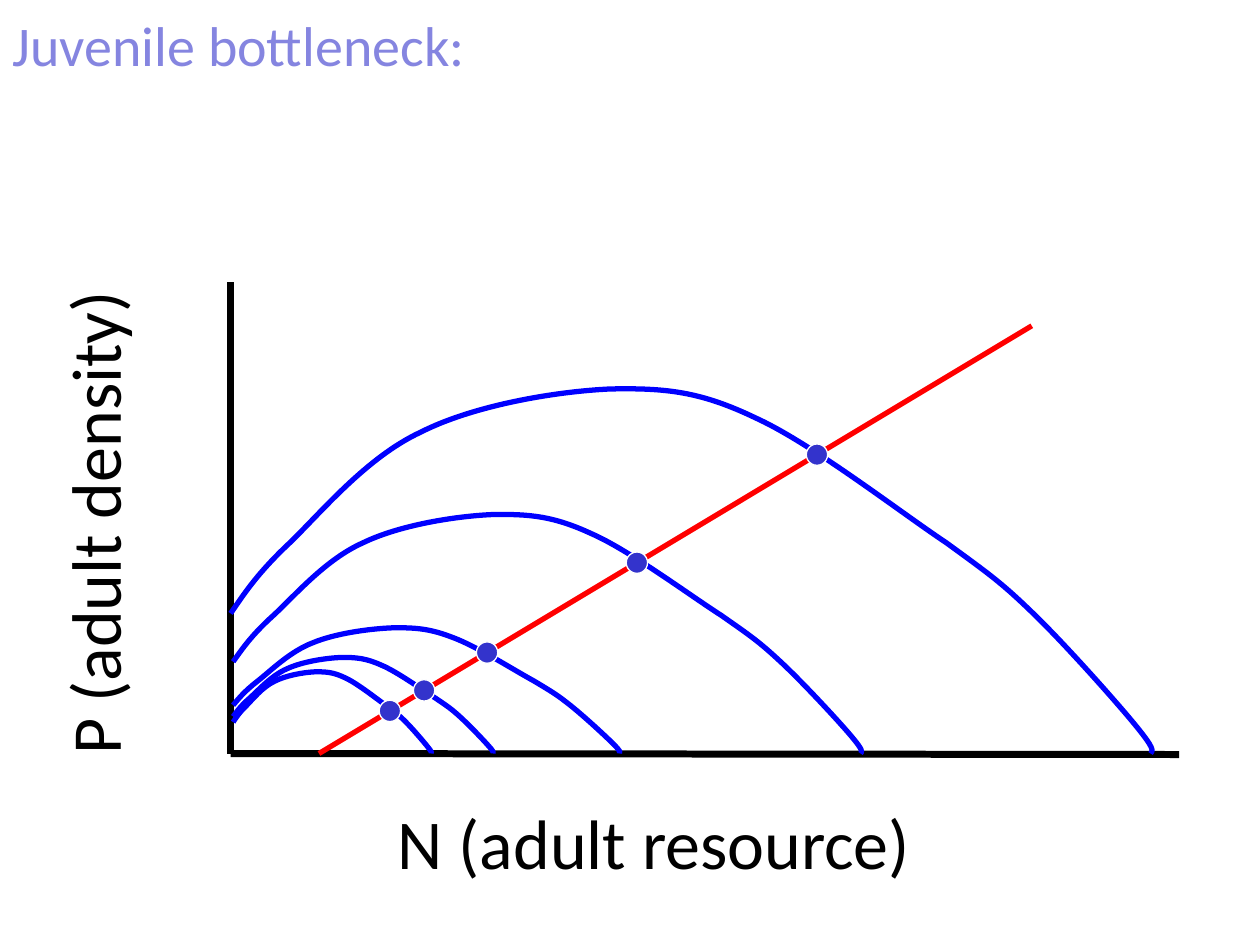
from pptx import Presentation
from pptx.dml.color import RGBColor
from pptx.enum.shapes import MSO_CONNECTOR, MSO_SHAPE
from pptx.enum.text import MSO_ANCHOR, MSO_AUTO_SIZE, PP_ALIGN
from pptx.oxml.ns import qn
from pptx.oxml.xmlchemy import OxmlElement
from pptx.util import Cm, Pt

STRAIGHT = MSO_CONNECTOR.STRAIGHT
ELLIPSE = MSO_SHAPE.OVAL
TOP = MSO_ANCHOR.TOP
NO_AUTOFIT = MSO_AUTO_SIZE.NONE
LEFT = PP_ALIGN.LEFT

LAVENDER = RGBColor(0x85, 0x85, 0xE0)
BLACK = RGBColor(0, 0, 0)
BLUE = RGBColor(0, 0, 0xFF)
RED = RGBColor(0xFF, 0, 0)
INDIGO = RGBColor(0x33, 0x33, 0xCC)
WHITE = RGBColor(0xFF, 0xFF, 0xFF)

FONT = "Calibri"
TITLE_BOX = (0, 0.08, 9.73, 3)
PLOT_BOX = (4.65, 5.69, 19.12, 9.5)

HUMP_START = (0, 61.7)
HUMP_BEZIERS = [
    [(1.5, 56.2), (2.9, 50.7), (6.4, 42.4)],
    [(9.8, 34.1), (14.7, 19), (20.6, 12.1)],
    [(26.3, 4.8), (35.1, 1), (41.1, 0.3)],
    [(47.2, 0), (50.9, 1), (56.9, 8.3)],
    [(62.9, 15.2), (72.4, 33.8), (77.5, 42.4)],
    [(82.4, 51.4), (83.5, 53.4), (86.9, 61.7)],
    [(90.3, 70), (95.9, 85.9), (98, 92.4)],
    [(100, 98.6), (99.9, 99.3), (99.6, 100)],
]
HUMP_SIZES = [(0.05, 4.01, 1.65), (0.05, 5.26, 1.94), (0.05, 7.82, 2.54),
              (0.05, 12.7, 4.83), (0, 18.62, 7.37)]
ISOCLINE_FOOT = 1.78
ISOCLINE_END = 16.15
ISOCLINE_SLOPE = 0.6
EQUILIBRIA = [11.82, 8.19, 3.9, 3.21, 5.17]
DOT_SIZE = 0.43


def write_text(shape, text, size, color, line_spacing=None):
    """Write left-aligned text with the given format into a shape."""
    frame = shape.text_frame
    frame.text = text
    frame.word_wrap = True
    frame.auto_size = NO_AUTOFIT
    frame.vertical_anchor = TOP
    paragraph = frame.paragraphs[0]
    paragraph.alignment = LEFT
    paragraph.line_spacing = line_spacing
    font = paragraph.runs[0].font
    font.name, font.size = FONT, Pt(size)
    font.color.rgb = color


def add_line(shapes, start, end, color, width):
    """Draw a straight line without a shadow."""
    line = shapes.add_connector(STRAIGHT, *map(Cm, start + end))
    line.line.color.rgb = color
    line.line.width = Pt(width)
    line._element.spPr.append(OxmlElement("a:effectLst"))


def add_title(slide, box):
    """Place the slide title in its box."""
    title = slide.shapes.title
    title.left, title.top, title.width, title.height = map(Cm, box)
    write_text(title, "Juvenile bottleneck:", 32, LAVENDER)


def add_axes(slide, box):
    """Draw both axes and their labels as one group."""
    left, top, width, height = box
    bottom = top + height
    shapes = slide.shapes.add_group_shape().shapes
    add_line(shapes, (left, top), (left, bottom), BLACK, 4)
    add_line(shapes, (left, bottom), (left + width, bottom + 0.02), BLACK, 4)
    labels = [("N (adult resource)", 3.12, 10.06, 11.91, 0),
              ("P (adult density)", -8.31, 3.28, 10.8, 270)]
    for text, dx, dy, length, rotation in labels:
        label = shapes.add_textbox(Cm(left + dx), Cm(top + dy), Cm(length), Cm(2.18))
        label.rotation = rotation
        write_text(label, text, 40, BLACK, line_spacing=1.15)


def add_hump(slide, box):
    """Draw the hump-shaped resource isocline scaled to its box."""
    left, top, width, height = box

    def place(point):
        """Turn percentages of the box into slide lengths."""
        return Cm(left + width * point[0] / 100), Cm(top + height * point[1] / 100)

    builder = slide.shapes.build_freeform(*place(HUMP_START))
    points = [place(point) for bezier in HUMP_BEZIERS for point in bezier]
    builder.add_line_segments(points, close=False)
    hump = builder.convert_to_shape()
    hump.fill.background()
    hump.line.color.rgb = BLUE
    hump.line.width = Pt(3)
    hump.shadow.inherit = False
    segments = list(hump._element.iter(qn("a:lnTo")))
    for first in range(0, len(segments), 3):
        bezier = OxmlElement("a:cubicBezTo")
        segments[first].addprevious(bezier)
        for segment in segments[first:first + 3]:
            bezier.append(segment[0])
            segment.getparent().remove(segment)


def add_isoclines(slide, box):
    """Draw the humps, the rising line and the dots where they cross."""
    left, top, _, plot_height = box
    bottom = top + plot_height
    for dx, width, height in HUMP_SIZES:
        add_hump(slide, (left + dx, bottom - height, width, height))

    def on_isocline(x):
        """Give the point of the rising line at a distance from the axis."""
        return left + x, bottom - ISOCLINE_SLOPE * (x - ISOCLINE_FOOT)

    add_line(slide.shapes, on_isocline(ISOCLINE_FOOT), on_isocline(ISOCLINE_END), RED, 3)
    for x in EQUILIBRIA:
        center_x, center_y = on_isocline(x)
        dot = slide.shapes.add_shape(
            ELLIPSE, Cm(center_x - DOT_SIZE / 2), Cm(center_y - DOT_SIZE / 2),
            Cm(DOT_SIZE), Cm(DOT_SIZE))
        dot.fill.solid()
        dot.fill.fore_color.rgb = INDIGO
        dot.line.color.rgb = WHITE
        dot.line.width = Pt(0.75)
        dot.shadow.inherit = False


def main():
    """Build the slide and save it."""
    deck = Presentation()
    deck.slide_width, deck.slide_height = Cm(25.4), Cm(19.05)
    slide = deck.slides.add_slide(deck.slide_layouts[5])
    add_title(slide, TITLE_BOX)
    add_axes(slide, PLOT_BOX)
    add_isoclines(slide, PLOT_BOX)
    deck.save("out.pptx")


if __name__ == "__main__":
    main()
